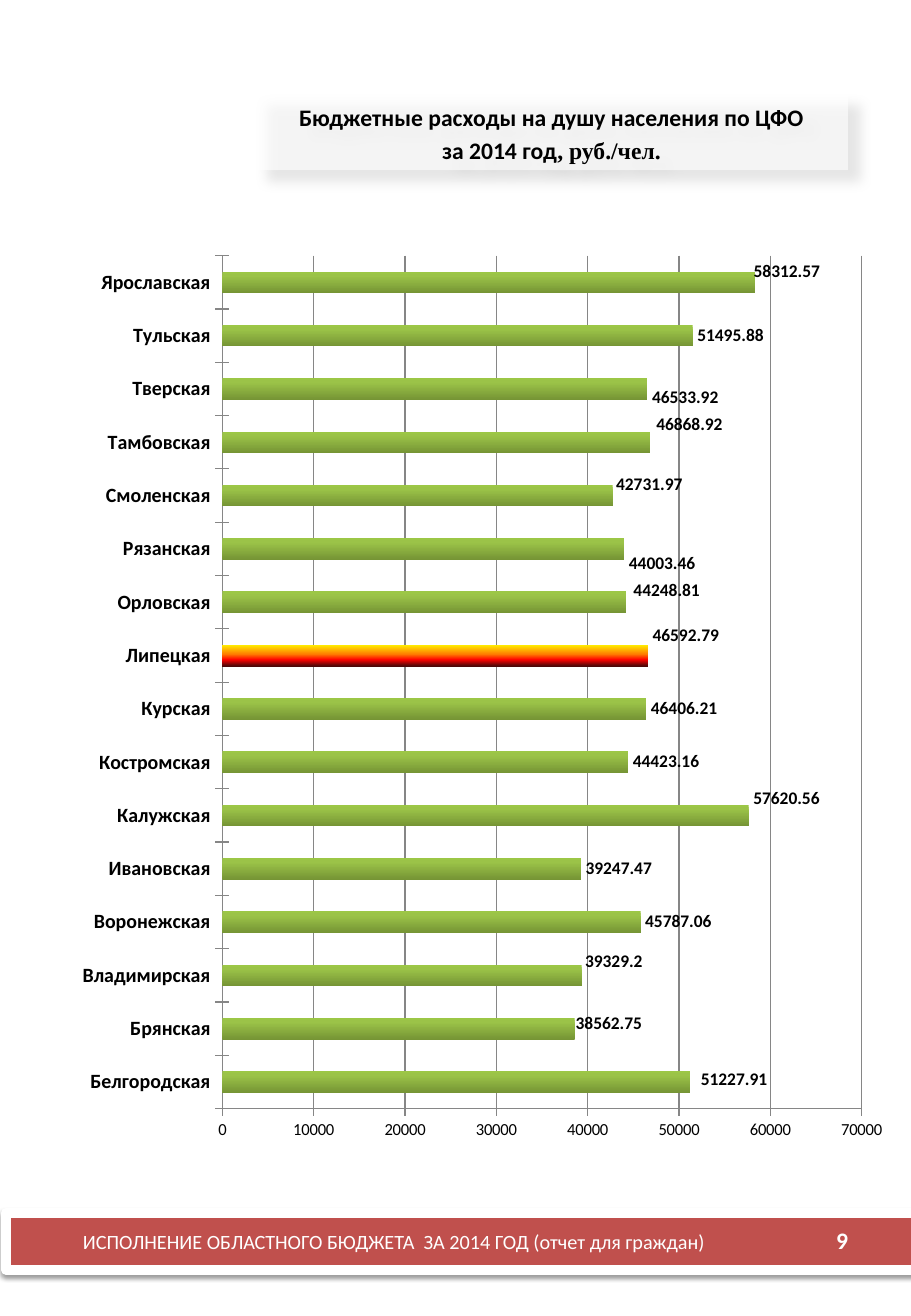
"""Builds the page comparing regional budget spending per resident."""
from lxml import etree
from pptx import Presentation
from pptx import util as u
from pptx.chart import data as chart_data
from pptx.dml.color import RGBColor
from pptx.enum import chart as charts, shapes, text
from pptx.oxml import ns, parse_xml

REGIONS = [
    ("Белгородская", 51227.91), ("Брянская", 38562.75),
    ("Владимирская", 39329.2), ("Воронежская", 45787.06),
    ("Ивановская", 39247.47), ("Калужская", 57620.56),
    ("Костромская", 44423.16), ("Курская", 46406.21),
    ("Липецкая", 46592.79), ("Орловская", 44248.81),
    ("Рязанская", 44003.46), ("Смоленская", 42731.97),
    ("Тамбовская", 46868.92), ("Тверская", 46533.92),
    ("Тульская", 51495.88), ("Ярославская", 58312.57),
]
HIGHLIGHT = "Липецкая"
GREEN = [(0, "9CC746"), (20, "9BC348"), (100, "769535")]
FLAME = [(0, "FFF200"), (45, "FF7A00"), (70, "FF0300"), (100, "4D0808")]
PLOT = {"x": 0.16, "y": 0.03, "w": 0.81, "h": 0.9}
LABEL_SHIFTS = {
    "Белгородская": (0.05, -0.02), "Брянская": (-0.03, -0.04),
    "Владимирская": (-0.01, -0.11), "Калужская": (0, -0.14),
    "Липецкая": (0, -0.16), "Орловская": (0.02, -0.09),
    "Рязанская": (0, 0.12), "Смоленская": (-0.01, -0.09),
    "Тамбовская": (0.01, -0.14), "Тверская": (0, 0.07),
    "Ярославская": (-0.05, -0.09),
}


def color(value):
    """Return the colour for a hex string."""
    return RGBColor.from_string(value)


def layout_xml(x, y, w=None, h=None):
    """Return a manual chart layout, with a size for the inner plot area."""
    parts = [("x", x), ("y", y)]
    if w is not None:
        parts = [("layoutTarget", "inner"), ("xMode", "edge"), ("yMode", "edge"),
                 *parts, ("w", w), ("h", h)]
    body = "".join(f'<c:{name} val="{value}"/>' for name, value in parts)
    return parse_xml(f'<c:layout {ns.nsdecls("c")}><c:manualLayout>{body}'
                     '</c:manualLayout></c:layout>')


class Page:
    """Holds the style and the current slide."""

    font = "Calibri"
    black = "000000"
    white = "FFFFFF"
    gray = "868686"

    def __init__(self, deck):
        """Add a blank slide to the deck."""
        self.slide = deck.slides.add_slide(deck.slide_layouts[6])

    def style(self, font, size, hue, bold=False):
        """Set the look of a font."""
        font.name, font.size, font.bold = self.font, u.Pt(size), bold
        font.color.rgb = color(hue)

    def panel(self, place, fill, shadow, alpha=100, border=0):
        """Draw a rectangle with an outer shadow."""
        box = self.slide.shapes.add_shape(
            shapes.MSO_SHAPE.RECTANGLE, *map(u.Inches, place))
        box.fill.solid()
        box.fill.fore_color.rgb = color(fill)
        if alpha < 100:
            tint = box.fill._xPr.find(".//" + ns.qn("a:srgbClr"))
            etree.SubElement(tint, ns.qn("a:alpha")).set("val", str(alpha * 1000))
        if border:
            box.line.color.rgb = color(self.white)
            box.line.width = u.Pt(border)
        else:
            box.line.fill.background()
        box.shadow.inherit = False
        opacity, blur, distance, angle = shadow
        effects = box._element.spPr.find(ns.qn("a:effectLst"))
        effects.append(parse_xml(
            f'<a:outerShdw {ns.nsdecls("a")} blurRad="{u.Pt(blur)}" '
            f'dist="{u.Pt(distance)}" dir="{angle * 60000}" algn="t" rotWithShape="0">'
            f'<a:srgbClr val="{self.black}"><a:alpha val="{opacity * 1000}"/>'
            '</a:srgbClr></a:outerShdw>'))
        return box

    def fill_text(self, box, lines, size, hue, align, anchor, bold=False):
        """Fill a box with paragraphs made of (words, font) runs."""
        frame = box.text_frame
        frame.word_wrap = True
        frame.vertical_anchor = anchor
        for index, line in enumerate(lines):
            para = frame.add_paragraph() if index else frame.paragraphs[0]
            para.alignment = align
            if index:
                para.space_before = u.Pt(size * 0.2)
            for words, font in line:
                span = para.add_run()
                span.text = words
                self.style(span.font, size, hue, bold)
                span.font.name = font

    def label(self, place, words, size, align, bold=False):
        """Add a white line of text in its own box."""
        box = self.slide.shapes.add_textbox(*map(u.Inches, place))
        self.fill_text(box, [[(words, self.font)]], size, self.white, align,
                       text.MSO_ANCHOR.MIDDLE, bold)

    def gradient(self, fill, stops):
        """Apply a gradient that runs from top to bottom."""
        fill.gradient()
        old = fill._xPr.find(ns.qn("a:gradFill"))
        marks = "".join(f'<a:gs pos="{place * 1000}"><a:srgbClr val="{hue}"/></a:gs>'
                        for place, hue in stops)
        old.getparent().replace(old, parse_xml(
            f'<a:gradFill {ns.nsdecls("a")}><a:gsLst>{marks}</a:gsLst>'
            '<a:lin ang="5400000" scaled="0"/></a:gradFill>'))

    def bars(self, place, rows):
        """Add the bar chart of the regions."""
        source = chart_data.CategoryChartData()
        source.categories = [name for name, _ in rows]
        source.add_series("Series 1", [value for _, value in rows])
        chart = self.slide.shapes.add_chart(
            charts.XL_CHART_TYPE.BAR_CLUSTERED, *map(u.Inches, place), source).chart
        chart.has_legend = chart.has_title = False
        self.style(chart.font, 10, self.black)
        for axis, size, bold in ((chart.category_axis, 12, True),
                                 (chart.value_axis, 10, False)):
            axis.major_tick_mark = charts.XL_TICK_MARK.CROSS
            axis.format.line.color.rgb = color(self.gray)
            self.style(axis.tick_labels.font, size, self.black, bold)
        values = chart.value_axis
        values.minimum_scale, values.maximum_scale, values.major_unit = 0, 70000, 10000
        values.has_major_gridlines = True
        values.major_gridlines.format.line.color.rgb = color(self.gray)
        area = chart._chartSpace.chart.plotArea
        for old in area.findall(ns.qn("c:layout")):
            area.remove(old)
        area.insert(0, layout_xml(**PLOT))
        plot = chart.plots[0]
        plot.gap_width, plot.vary_by_categories = 150, False
        self.bar_series(plot.series[0], rows, place[2:])

    def bar_series(self, series, rows, size):
        """Colour the bars and place their labels."""
        self.gradient(series.format.fill, GREEN)
        series.invert_if_negative = False
        outside = charts.XL_LABEL_POSITION.OUTSIDE_END
        labels = series.data_labels
        labels.show_value, labels.position = True, outside
        self.style(labels.font, 10.5, self.black, True)
        for index, (name, _) in enumerate(rows):
            point = series.points[index]
            if name == HIGHLIGHT:
                self.gradient(point.format.fill, FLAME)
            if name in LABEL_SHIFTS:
                point.data_label.position = outside
                self.style(point.data_label.font, 10.5, self.black, True)
                right, down = LABEL_SHIFTS[name]
                mark = series._element.xpath(f'c:dLbls/c:dLbl/c:idx[@val="{index}"]')[0]
                mark.addnext(layout_xml(right / size[0], down / size[1]))


def main():
    """Build and save the page."""
    deck = Presentation()
    deck.slide_width, deck.slide_height = u.Inches(7.5), u.Inches(10.83)
    page = Page(deck)
    page.panel((0.05, 9.98, 7.5, 0.47), "C0504D", (38, 3.1, 1.6, 90), border=6)
    page.label((0.29, 10.06, 5.91, 0.31),
               "ИСПОЛНЕНИЕ ОБЛАСТНОГО БЮДЖЕТА  ЗА 2014 ГОД (отчет для граждан)",
               12, text.PP_ALIGN.CENTER)
    page.label((6.43, 10.06, 0.65, 0.29), "9", 14, text.PP_ALIGN.RIGHT, True)
    page.bars((0.68, 1.87, 6.61, 7.8), REGIONS)
    title = page.panel((2.1, 0.77, 4.88, 0.63), page.white, (16, 7, 10, 45), alpha=60)
    page.fill_text(title, [
        [("Бюджетные расходы на душу населения по ЦФО", page.font)],
        [("за 2014 год", page.font), (", руб./чел.", "Times New Roman")],
    ], 14, page.black, text.PP_ALIGN.CENTER, text.MSO_ANCHOR.BOTTOM, True)
    deck.save("out.pptx")


if __name__ == "__main__":
    main()
